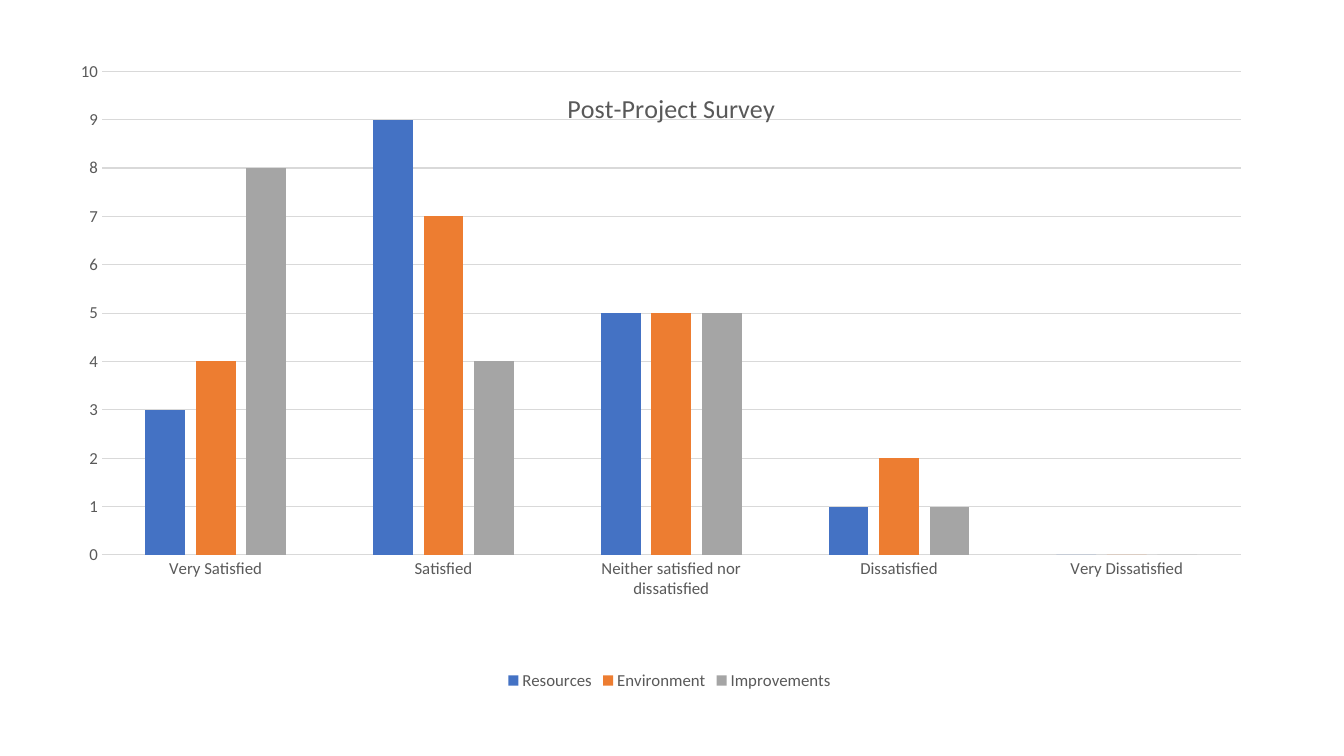
from dataclasses import dataclass

from lxml.etree import SubElement
from pptx import Presentation
from pptx.chart.data import CategoryChartData
from pptx.dml.color import RGBColor
from pptx.enum.chart import XL_CHART_TYPE, XL_LEGEND_POSITION, XL_TICK_MARK
from pptx.oxml.ns import qn
from pptx.util import Inches, Pt


@dataclass(frozen=True)
class Theme:
    font: str = "Calibri"
    ink: str = "595959"
    rule: str = "D9D9D9"
    rule_width: float = 0.75
    title_size: float = 18.6
    label_size: float = 12
    series: tuple = ("4472C4", "ED7D31", "A5A5A5")


def format_font(font, theme, size):
    font.name = theme.font
    font.size = Pt(size)
    font.bold = False
    font.color.rgb = RGBColor.from_string(theme.ink)


def write_text(frame, text, *, theme, size):
    frame.text = text
    format_font(frame.paragraphs[0].runs[0].font, theme, size)


def place(part, index, **shares):
    for previous in part.findall(qn("c:layout")):
        part.remove(previous)
    layout = SubElement(part, qn("c:layout"))
    part.insert(index, layout)
    manual = SubElement(layout, qn("c:manualLayout"))
    if "w" in shares:
        SubElement(manual, qn("c:layoutTarget")).set("val", "inner")
    for side in ("x", "y"):
        SubElement(manual, qn(f"c:{side}Mode")).set("val", "edge")
    for side, share in shares.items():
        SubElement(manual, qn(f"c:{side}")).set("val", str(share))


class SurveySlide:
    def __init__(self, deck, theme):
        self.deck = deck
        self.theme = theme
        self.slide = deck.slides.add_slide(deck.slide_layouts[6])

    def columns(self, categories, answers, *, left, top, width, height):
        data = CategoryChartData(number_format="General")
        data.categories = categories
        for topic, counts in answers.items():
            data.add_series(topic, counts)
        across, down = self.deck.slide_width, self.deck.slide_height
        survey = self.slide.shapes.add_chart(
            XL_CHART_TYPE.COLUMN_CLUSTERED,
            int(left * across), int(top * down),
            int(width * across), int(height * down), data,
        ).chart
        format_font(survey.font, self.theme, self.theme.label_size)
        bars = survey.plots[0]
        bars.gap_width = 219
        bars.overlap = -27
        bars.vary_by_categories = False
        for topic, color in zip(bars.series, self.theme.series):
            topic.format.fill.solid()
            topic.format.fill.fore_color.rgb = RGBColor.from_string(color)
            topic.invert_if_negative = False
        place(survey.element.find(".//" + qn("c:plotArea")), 0,
              x=0.022, y=0.017, w=0.959, h=0.763)
        return survey

    def rule(self, line):
        line.color.rgb = RGBColor.from_string(self.theme.rule)
        line.width = Pt(self.theme.rule_width)

    def axes(self, survey, top_count, step):
        satisfaction, count = survey.category_axis, survey.value_axis
        for axis in (satisfaction, count):
            axis.major_tick_mark = XL_TICK_MARK.NONE
            axis.minor_tick_mark = XL_TICK_MARK.NONE
            format_font(axis.tick_labels.font, self.theme, self.theme.label_size)
        self.rule(satisfaction.format.line)
        count.minimum_scale, count.maximum_scale = 0, top_count
        count.major_unit = step
        count.format.line.fill.background()
        count.has_major_gridlines = True
        self.rule(count.major_gridlines.format.line)

    def title(self, survey, text, *, x, y):
        survey.has_title = True
        heading = survey.chart_title
        write_text(heading.text_frame, text, theme=self.theme,
                   size=self.theme.title_size)
        place(heading.element, 1, x=x, y=y)
        heading.element.find(qn("c:overlay")).set("val", "1")

    def legend(self, survey):
        survey.has_legend = True
        survey.legend.position = XL_LEGEND_POSITION.BOTTOM
        survey.legend.include_in_layout = False
        format_font(survey.legend.font, self.theme, self.theme.label_size)


def main():
    deck = Presentation()
    deck.slide_width, deck.slide_height = Inches(13.33), Inches(7.5)
    page = SurveySlide(deck, Theme())
    survey = page.columns(
        ["Very Satisfied", "Satisfied", "Neither satisfied nor dissatisfied",
         "Dissatisfied", "Very Dissatisfied"],
        {
            "Resources": (3, 9, 5, 1, 0),
            "Environment": (4, 7, 5, 2, 0),
            "Improvements": (8, 4, 5, 1, 0),
        },
        left=0.0563, top=0.08, width=0.8837, height=0.8387,
    )
    page.axes(survey, top_count=10, step=1)
    page.title(survey, "Post-Project Survey", x=0.41, y=0.04)
    page.legend(survey)
    deck.save("out.pptx")


if __name__ == "__main__":
    main()
